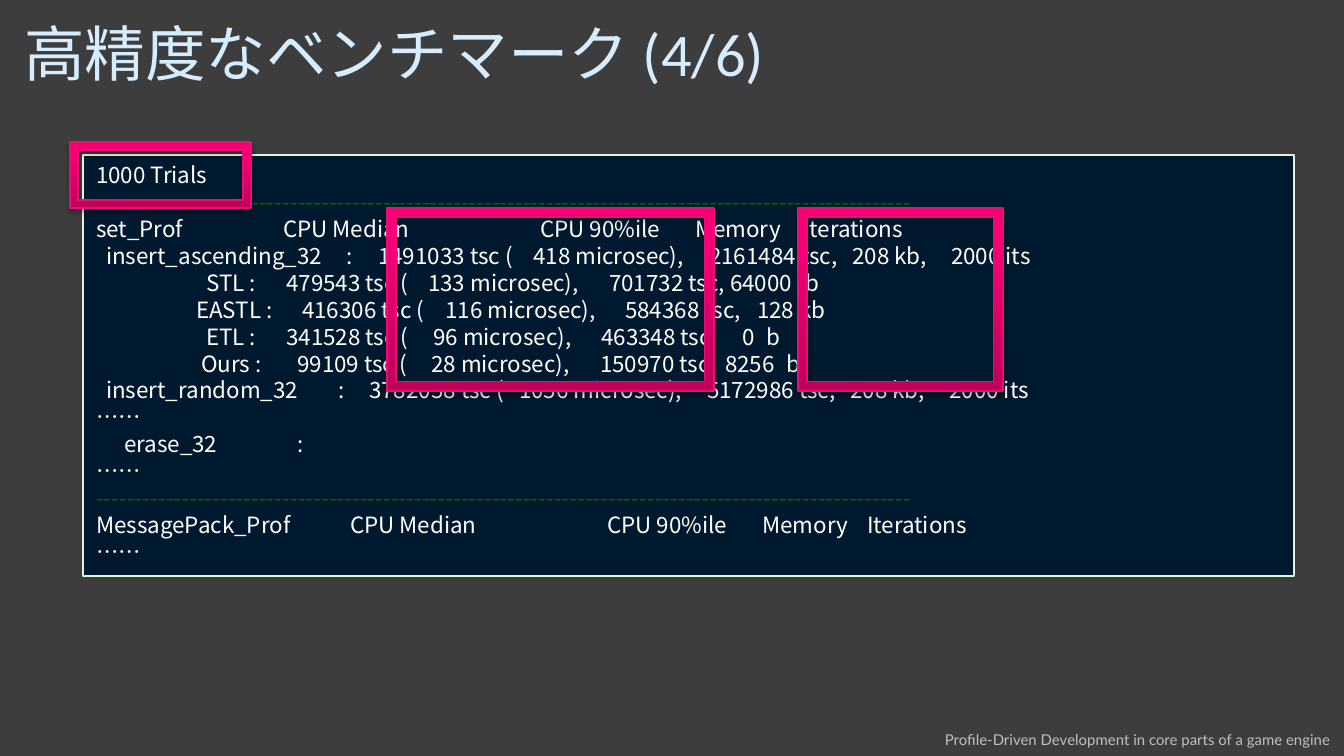
from pptx import Presentation
from pptx.dml.color import RGBColor
from pptx.enum.shapes import MSO_SHAPE
from pptx.enum.text import MSO_ANCHOR, PP_ALIGN
from pptx.oxml import parse_xml
from pptx.oxml.ns import nsdecls, qn
from pptx.util import Pt

RECT, FRAME = MSO_SHAPE.RECTANGLE, MSO_SHAPE.FRAME
TOP, MIDDLE = MSO_ANCHOR.TOP, MSO_ANCHOR.MIDDLE
LEFT, RIGHT = PP_ALIGN.LEFT, PP_ALIGN.RIGHT

PX_PER_INCH = 134.4
TITLE_FONT, FOOTER_FONT, CJK_FONT = "Calibri", "Lato", "Noto Sans CJK JP"
COLORS = {
    "background": "3D3D3D", "title": "D6ECFF", "footer": "BFBFBF",
    "panel": "00192F", "panel_line": "E5F6D8", "text": "FFFFFF",
    "rule": "006600", "frame_line": "EA0F77", "shadow": "000000",
}
FRAME_STOPS = [(0, "BE005A"), (80, "F70075"), (100, "F80076")]

RULE = [(0, "-" * 105)]
ELLIPSIS = [(0, "……")]
HEADINGS = ["CPU Median", "CPU 90%ile", "Memory", "Iterations"]

# Each console line is a list of (px from the text edge, words)
CONSOLE = [
    [(0, "1000 Trials")],
    RULE,
    [(0, "set_Prof"), *zip([187, 444, 599, 707], HEADINGS)],
    [(10, "insert_ascending_32"), (250, ":"), (282, "1491033 tsc ("),
     (437, "418 microsec),"), (613, "2161484 tsc,"), (756, "208 kb,"), (855, "2000 its")],
    [(110, "STL :"), (190, "479543 tsc ("), (332, "133 microsec),"),
     (513, "701732 tsc, 64000"), (709, "b")],
    [(100, "EASTL :"), (206, "416306 tsc ("), (349, "116 microsec),"),
     (529, "584368 tsc,"), (661, "128 kb")],
    [(110, "ETL :"), (190, "341528 tsc ("), (337, "96 microsec),"),
     (505, "463348 tsc,"), (646, "0"), (670, "b")],
    [(105, "Ours :"), (201, "99109 tsc ("), (335, "28 microsec),"),
     (504, "150970 tsc,"), (629, "8256"), (690, "b")],
    [(10, "insert_random_32"), (242, ":"), (273, "3782058 tsc ("),
     (423, "1056 microsec),"), (611, "5172986 tsc,"), (754, "208 kb,"), (853, "2000 its")],
    ELLIPSIS,
    [(28, "erase_32"), (201, ":")],
    ELLIPSIS,
    RULE,
    [(0, "MessagePack_Prof"), *zip([254, 511, 666, 771], HEADINGS)],
    ELLIPSIS,
]


def px(n):
    return round(n * 914400 / PX_PER_INCH)


def rgb(name):
    return RGBColor.from_string(COLORS[name])


def format_runs(p, font, size, color):
    for r in p.runs:
        r.font.name, r.font.size = font, Pt(size)
        r.font.color.rgb = rgb(color)
        r.font._element.append(parse_xml(f'<a:ea {nsdecls("a")} typeface="{CJK_FONT}"/>'))


def add_title(s, box, text):
    sp = s.shapes.title
    sp.left, sp.top, sp.width, sp.height = map(px, box)
    tf = sp.text_frame
    tf.text = text
    tf.vertical_anchor = MIDDLE
    p = tf.paragraphs[0]
    p.alignment = LEFT
    format_runs(p, TITLE_FONT, 32.4, "title")


def add_footer(s, box, text):
    tf = s.shapes.add_textbox(*map(px, box)).text_frame
    tf.word_wrap = True
    tf.text = text
    p = tf.paragraphs[0]
    p.alignment = RIGHT
    format_runs(p, FOOTER_FONT, 8, "footer")


def set_line(p, cells):
    """Place each cell of a console line at its own tab stop."""
    stops = [x for x, _ in cells if x]
    if stops:
        tabs = "".join(f'<a:tab pos="{px(x)}" algn="l"/>' for x in stops)
        p._p.get_or_add_pPr().append(
            parse_xml(f'<a:tabLst {nsdecls("a")}>{tabs}</a:tabLst>'))
    p.text = "".join(("\t" if x else "") + words for x, words in cells)
    p.alignment = LEFT
    p.line_spacing = Pt(14.4)
    format_runs(p, CJK_FONT, 12, "rule" if cells is RULE else "text")


def add_console(s, box, lines):
    sp = s.shapes.add_shape(RECT, *map(px, box))
    sp.shadow.inherit = False
    sp.fill.solid()
    sp.fill.fore_color.rgb = rgb("panel")
    sp.line.color.rgb = rgb("panel_line")
    sp.line.width = Pt(0.75)
    tf = sp.text_frame
    tf.word_wrap = True
    tf.vertical_anchor = TOP
    for i, cells in enumerate(lines):
        set_line(tf.add_paragraph() if i else tf.paragraphs[0], cells)


def add_highlight(s, box, thickness):
    sp = s.shapes.add_shape(FRAME, *map(px, box))
    sp.adjustments[0] = thickness
    sp.line.color.rgb = rgb("frame_line")
    sp.line.width = Pt(0.75)
    sp.shadow.inherit = False
    stops = "".join(f'<a:gs pos="{pos * 1000}"><a:srgbClr val="{color}"/></a:gs>'
                    for pos, color in FRAME_STOPS)
    spPr = sp._element.spPr
    spPr.find(qn("a:prstGeom")).addnext(parse_xml(
        f'<a:gradFill {nsdecls("a")} rotWithShape="1"><a:gsLst>{stops}</a:gsLst>'
        '<a:lin ang="16200000" scaled="0"/></a:gradFill>'))
    spPr.find(qn("a:effectLst")).append(parse_xml(
        f'<a:outerShdw {nsdecls("a")} blurRad="{Pt(3.1)}" dist="{Pt(1.8)}" '
        f'dir="5400000" rotWithShape="0"><a:srgbClr val="{COLORS["shadow"]}">'
        '<a:alpha val="35000"/></a:srgbClr></a:outerShdw>'))


def main():
    prs = Presentation()
    prs.slide_width, prs.slide_height = px(1344), px(756)
    s = prs.slides.add_slide(prs.slide_layouts[5])
    s.background.fill.solid()
    s.background.fill.fore_color.rgb = rgb("background")

    add_footer(s, (831, 724, 513, 32),
               "Profile-Driven Development in core parts of a game engine")
    add_title(s, (11, 8, 1316, 89), "高精度なベンチマーク (4/6)")
    add_console(s, (83, 155, 1211, 421), CONSOLE)
    for box, thickness in [((70, 142, 181, 66), 0.12),
                           ((387, 208, 327, 183), 0.05),
                           ((798, 208, 205, 183), 0.05)]:
        add_highlight(s, box, thickness)
    prs.save("out.pptx")


if __name__ == "__main__":
    main()
